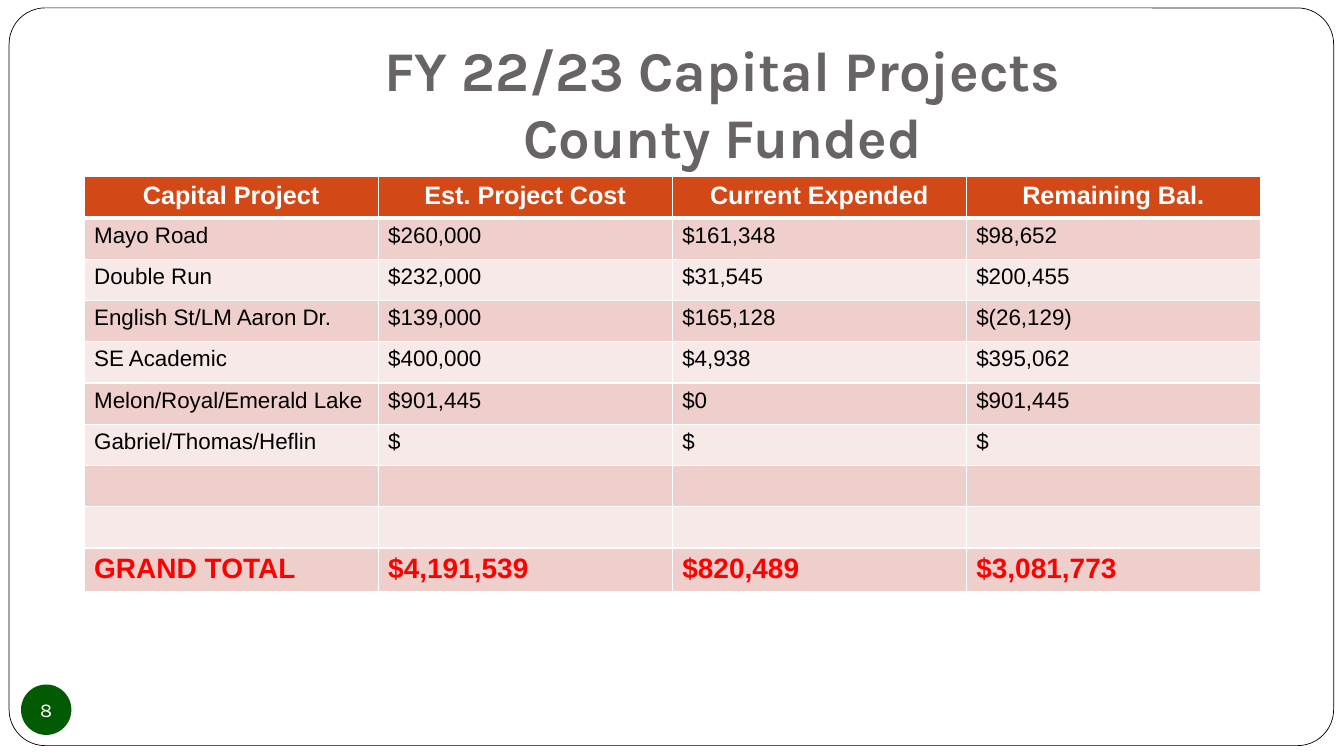
from lxml import etree
from pptx import Presentation
from pptx.dml.color import RGBColor
from pptx.enum import shapes, text
from pptx.oxml import ns
from pptx.util import Cm, Pt

TITLE = ["FY 22/23 Capital Projects", "County Funded"]
PAGE = "8"
ROWS = [
    ("Capital Project", "Est. Project Cost", "Current Expended", "Remaining Bal."),
    ("Mayo Road", "$260,000", "$161,348", "$98,652"),
    ("Double Run", "$232,000", "$31,545", "$200,455"),
    ("English St/LM Aaron Dr.", "$139,000", "$165,128", "$(26,129)"),
    ("SE Academic", "$400,000", "$4,938", "$395,062"),
    ("Melon/Royal/Emerald Lake", "$901,445", "$0", "$901,445"),
    ("Gabriel/Thomas/Heflin", "$", "$", "$"),
    ("", "", "", ""),
    ("", "", "", ""),
    ("GRAND TOTAL", "$4,191,539", "$820,489", "$3,081,773"),
]

WHITE = RGBColor(0xFF, 0xFF, 0xFF)
BLACK = RGBColor(0, 0, 0)
GRAY = RGBColor(0x69, 0x64, 0x64)
RUST = RGBColor(0xD3, 0x48, 0x17)
ROSE = RGBColor(0xEF, 0xCF, 0xCC)
PALE = RGBColor(0xF7, 0xE9, 0xE8)
RED = RGBColor(0xFF, 0, 0)
GREEN = RGBColor(0x02, 0x5A, 0x02)
CENTER = text.PP_ALIGN.CENTER
COL_W, ROW_H = Cm(7.41), Cm(1.04)


def add_run(para, words, size, color, face, bold=False):
    run = para.add_run()
    run.text = words
    font = run.font
    font.size, font.name, font.bold = Pt(size), face, bold
    font.color.rgb = color


def add_form(slide, kind, box, fill):
    form = slide.shapes.add_shape(kind, *map(Cm, box))
    form.shadow.inherit = False
    form.fill.solid()
    form.fill.fore_color.rgb = fill
    return form


def set_edges(cell, top, bottom):
    """Draw white cell borders; top and bottom widths are in points."""
    props = cell._tc.get_or_add_tcPr()
    for side, width in zip("LRTB", (1, 1, top, bottom)):
        line = etree.SubElement(props, ns.qn("a:ln" + side), w=str(Pt(width)))
        fill = etree.SubElement(line, ns.qn("a:solidFill"))
        etree.SubElement(fill, ns.qn("a:srgbClr"), val=str(WHITE))


def add_frame(slide):
    frame = add_form(slide, shapes.MSO_SHAPE.ROUNDED_RECTANGLE,
                     (0.23, 0.2, 33.38, 18.59), WHITE)
    frame.adjustments[0] = 0.049
    frame.line.color.rgb = BLACK
    frame.line.width = Pt(0.5)


def add_title(slide):
    box = slide.shapes.add_textbox(Cm(6.78), Cm(0.76), Cm(22.86), Cm(3.18))
    body = box.text_frame
    body.word_wrap = True
    body.margin_bottom = Cm(0.25)
    para = body.paragraphs[0]
    para.alignment = CENTER
    for i, words in enumerate(TITLE):
        if i:
            para.add_line_break()
        add_run(para, words, 40, GRAY, "Karla", True)


def add_costs(slide):
    count, wide = len(ROWS), len(ROWS[0])
    table = slide.shapes.add_table(count, wide, Cm(2.12), Cm(4.45),
                                   COL_W * wide, ROW_H * count).table
    for col in table.columns:
        col.width = COL_W
    for r, row in enumerate(ROWS):
        table.rows[r].height = ROW_H
        head, total = r == 0, r == count - 1
        size, color = (18, WHITE) if head else (20, RED) if total else (16, BLACK)
        for c, words in enumerate(row):
            cell = table.cell(r, c)
            set_edges(cell, 3 if r == 1 else 1, 3 if head else 1)
            cell.fill.solid()
            cell.fill.fore_color.rgb = RUST if head else ROSE if r % 2 else PALE
            para = cell.text_frame.paragraphs[0]
            if head:
                para.alignment = CENTER
            if words:
                add_run(para, words, size, color, "Arial", head or total)


def add_badge(slide):
    badge = add_form(slide, shapes.MSO_SHAPE.OVAL, (0.53, 17.25, 1.27, 1.27), GREEN)
    badge.line.fill.background()
    body = badge.text_frame
    body.margin_left = body.margin_right = body.margin_top = body.margin_bottom = 0
    body.word_wrap = False
    body.vertical_anchor = text.MSO_ANCHOR.MIDDLE
    para = body.paragraphs[0]
    para.alignment = CENTER
    add_run(para, PAGE, 14, WHITE, "Karla")


def main():
    deck = Presentation()
    deck.slide_width, deck.slide_height = Cm(33.87), Cm(19.05)
    slide = deck.slides.add_slide(deck.slide_layouts[6])
    add_frame(slide)
    add_title(slide)
    add_costs(slide)
    add_badge(slide)
    deck.save("out.pptx")


if __name__ == "__main__":
    main()
